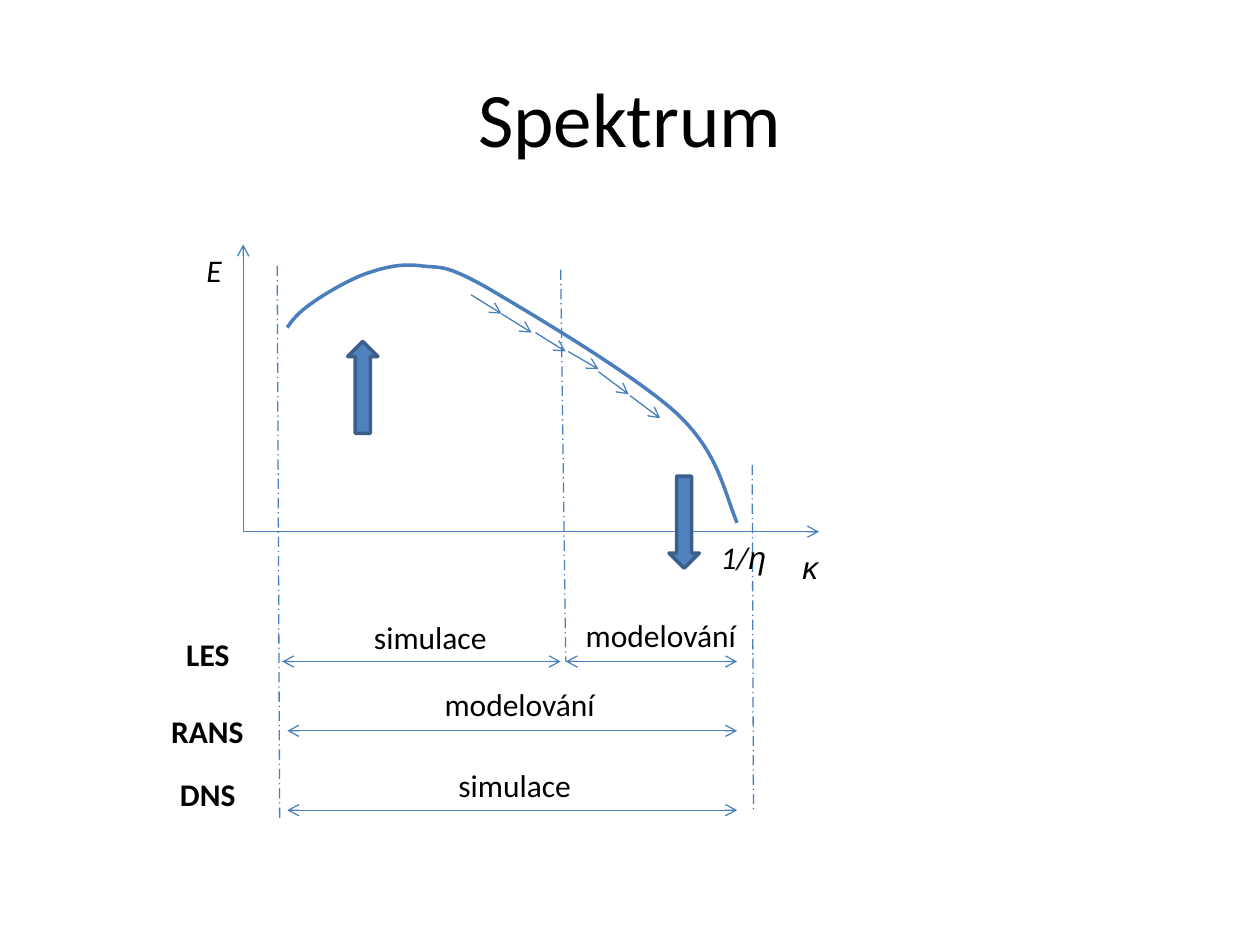
from dataclasses import dataclass

from lxml import etree
from pptx import Presentation
from pptx.dml.color import RGBColor
from pptx.enum.dml import MSO_LINE
from pptx.enum.shapes import MSO_CONNECTOR, MSO_SHAPE
from pptx.enum.text import MSO_ANCHOR, MSO_AUTO_SIZE, PP_ALIGN
from pptx.oxml.ns import qn
from pptx.util import Inches, Pt

STRAIGHT = MSO_CONNECTOR.STRAIGHT
DASH_DOT = MSO_LINE.LONG_DASH_DOT
UP, DOWN = MSO_SHAPE.UP_ARROW, MSO_SHAPE.DOWN_ARROW
CENTER, MIDDLE = PP_ALIGN.CENTER, MSO_ANCHOR.MIDDLE
FIT_TEXT = MSO_AUTO_SIZE.SHAPE_TO_FIT_TEXT

Point = tuple[float, float]


@dataclass(frozen=True)
class Theme:
    text: RGBColor = RGBColor(0x00, 0x00, 0x00)
    line: RGBColor = RGBColor(0x4B, 0x7E, 0xBC)
    fill: RGBColor = RGBColor(0x4F, 0x81, 0xBD)
    outline: RGBColor = RGBColor(0x3A, 0x5F, 0x8C)
    font: str = "Calibri"
    greek_font: str = "Arial"
    title_size: Pt = Pt(44)
    label_size: Pt = Pt(18)
    thin: Pt = Pt(0.75)
    thick: Pt = Pt(2)


@dataclass(frozen=True)
class Label:
    text: str
    left: float
    top: float
    width: float
    bold: bool = False
    italic: bool = False
    greek: str = ""


@dataclass(frozen=True)
class Line:
    start: Point
    end: Point
    head: bool = False
    tail: bool = False
    dashed: bool = False


@dataclass(frozen=True)
class BlockArrow:
    kind: MSO_SHAPE
    left: float
    top: float


THEME = Theme()
LABEL_HEIGHT = 0.4
ARROW_WIDTH, ARROW_HEIGHT = 0.24, 0.73
ORIGIN = (1.93, 4.22)
LOW, CUTOFF, HIGH = 2.28, 4.47, 5.85
LES_Y, RANS_Y, DNS_Y = 5.25, 5.8, 6.43

AXES = [
    Line(ORIGIN, (ORIGIN[0], 1.94), tail=True),
    Line(ORIGIN, (6.5, ORIGIN[1]), tail=True),
]
LIMITS = [
    Line((2.2, 2.11), (2.22, 6.51), dashed=True),
    Line((4.45, 2.14), (4.49, LES_Y), dashed=True),
    Line((5.97, 3.69), (5.98, 6.44), dashed=True),
]
RANGES = [
    Line((start, y), (end, y), head=True, tail=True)
    for start, end, y in [
        (2.24, CUTOFF - 0.02, LES_Y),
        (CUTOFF + 0.02, HIGH, LES_Y),
        (LOW, HIGH, RANS_Y),
        (LOW, HIGH, DNS_Y),
    ]
]
CASCADE = [
    Line((x, y), (x + 0.24, y + drop), tail=True)
    for x, y, drop in [
        (3.74, 2.34, 0.15), (3.98, 2.49, 0.15), (4.25, 2.64, 0.15),
        (4.51, 2.79, 0.14), (4.75, 2.95, 0.18), (5.0, 3.14, 0.18),
    ]
]
# Start point, then two control points and an end point for each Bézier segment.
SPECTRUM = [
    (2.28, 2.6),
    (2.32, 2.54), (2.37, 2.48), (2.47, 2.41),
    (2.58, 2.33), (2.77, 2.22), (2.91, 2.17),
    (3.06, 2.12), (3.18, 2.09), (3.34, 2.11),
    (3.5, 2.13), (3.52, 2.09), (3.86, 2.28),
    (4.2, 2.48), (5.03, 2.97), (5.37, 3.28),
    (5.7, 3.59), (5.74, 3.88), (5.85, 4.15),
]
LABELS = [
    Label("E", 1.54, 1.94, 0.32, italic=True),
    Label("", 6.27, 4.3, 0.45, italic=True, greek="κ"),
    Label("1/", 5.62, 4.22, 0.68, italic=True, greek="η"),
    Label("simulace", 2.87, 4.86, 1.1),
    Label("modelování", 4.55, 4.84, 1.41),
    Label("modelování", 3.43, 5.39, 1.41),
    Label("simulace", 3.54, 6.03, 1.1),
    Label("LES", 1.38, 4.99, 0.54, bold=True),
    Label("RANS", 1.26, 5.6, 0.78, bold=True),
    Label("DNS", 1.33, 6.1, 0.65, bold=True),
]
BLOCK_ARROWS = [BlockArrow(UP, 2.76, 2.71), BlockArrow(DOWN, 5.31, 3.78)]


def add_title(slide, text: str) -> None:
    sp = slide.shapes.add_textbox(Inches(0.5), Inches(0.3), Inches(9), Inches(1.25))
    tf = sp.text_frame
    tf.word_wrap = True
    tf.vertical_anchor = MIDDLE
    p = tf.paragraphs[0]
    p.text = text
    p.alignment = CENTER
    p.font.name, p.font.size = THEME.font, THEME.title_size
    p.font.color.rgb = THEME.text


def add_label(slide, label: Label) -> None:
    sp = slide.shapes.add_textbox(
        Inches(label.left), Inches(label.top), Inches(label.width), Inches(LABEL_HEIGHT)
    )
    tf = sp.text_frame
    tf.word_wrap = False
    tf.auto_size = FIT_TEXT
    p = tf.paragraphs[0]
    p.font.size = THEME.label_size
    p.font.bold, p.font.italic = label.bold, label.italic
    p.font.color.rgb = THEME.text
    for text, font in [(label.text, THEME.font), (label.greek, THEME.greek_font)]:
        if text:
            r = p.add_run()
            r.text = text
            r.font.name = font


def add_line(slide, line: Line) -> None:
    cx = slide.shapes.add_connector(STRAIGHT, *map(Inches, line.start + line.end))
    cx.line.color.rgb = THEME.line
    cx.line.width = THEME.thin
    if line.dashed:
        cx.line.dash_style = DASH_DOT
    sp_pr = cx._element.spPr
    ln = sp_pr.find(qn("a:ln"))
    for shown, tag in [(line.head, "a:headEnd"), (line.tail, "a:tailEnd")]:
        if shown:
            etree.SubElement(ln, qn(tag), type="arrow")
    etree.SubElement(sp_pr, qn("a:effectLst"))


def add_curve(slide, points: list[Point]) -> None:
    """Draw an open cubic Bézier curve by regrouping line segments in threes."""
    start, *rest = [(Inches(x), Inches(y)) for x, y in points]
    builder = slide.shapes.build_freeform(*start)
    builder.add_line_segments(rest, close=False)
    sp = builder.convert_to_shape()
    segments = list(sp._element.iter(qn("a:lnTo")))
    outline = segments[0].getparent()
    for i in range(0, len(segments), 3):
        bezier = etree.SubElement(outline, qn("a:cubicBezTo"))
        for segment in segments[i:i + 3]:
            bezier.append(segment[0])
            outline.remove(segment)
    sp.shadow.inherit = False
    sp.fill.background()
    sp.line.color.rgb = THEME.line
    sp.line.width = THEME.thick


def add_block_arrow(slide, arrow: BlockArrow) -> None:
    sp = slide.shapes.add_shape(
        arrow.kind, Inches(arrow.left), Inches(arrow.top),
        Inches(ARROW_WIDTH), Inches(ARROW_HEIGHT),
    )
    sp.shadow.inherit = False
    sp.fill.solid()
    sp.fill.fore_color.rgb = THEME.fill
    sp.line.color.rgb = THEME.outline
    sp.line.width = THEME.thick


def main() -> None:
    prs = Presentation()
    prs.slide_width, prs.slide_height = Inches(10), Inches(7.5)
    slide = prs.slides.add_slide(prs.slide_layouts[6])
    add_title(slide, "Spektrum")
    add_curve(slide, SPECTRUM)
    for line in AXES + LIMITS + RANGES + CASCADE:
        add_line(slide, line)
    for label in LABELS:
        add_label(slide, label)
    for arrow in BLOCK_ARROWS:
        add_block_arrow(slide, arrow)
    prs.save("out.pptx")


if __name__ == "__main__":
    main()
